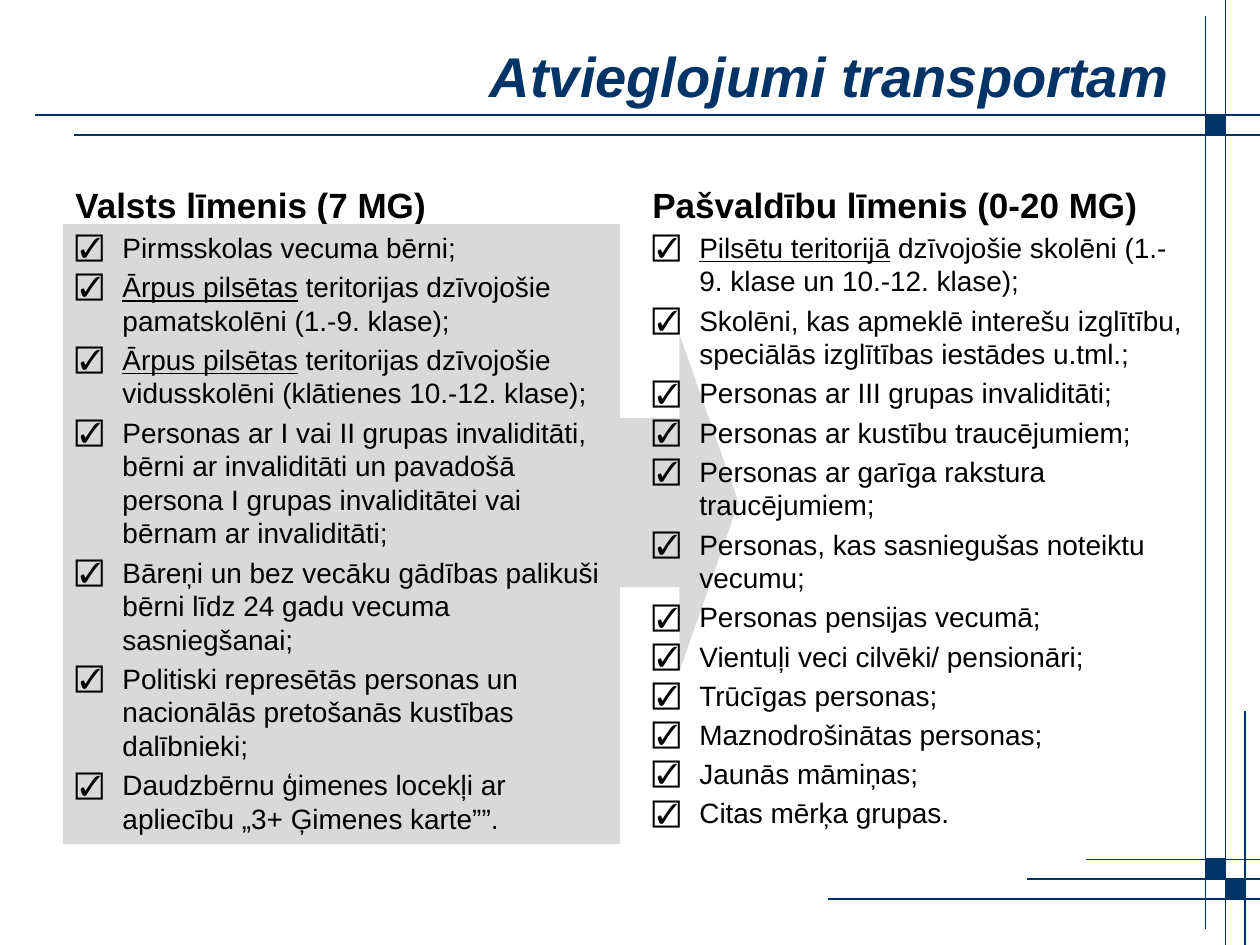
from pptx import Presentation
from pptx.dml.color import RGBColor
from pptx.enum.shapes import MSO_CONNECTOR as Link, MSO_SHAPE as Kind
from pptx.enum.text import MSO_ANCHOR as Anchor, PP_ALIGN as Align
from pptx.oxml.ns import qn
from pptx.util import Cm, Pt
from lxml.etree import SubElement

NAVY = RGBColor(0x00, 0x33, 0x66)
GREY = RGBColor(0xD9, 0xD9, 0xD9)
BLACK = RGBColor(0, 0, 0)

WIDE, HIGH = 25.4, 19.05
STEP = 0.4
COL = 24.3
TOP, LOW = 2.32, 17.32
LEFT, RIGHT = 1.27, 12.9
SPAN = 11.23

HEAD = {"size": Pt(32), "bold": True, "italic": True}
SUB = {"size": Pt(20), "bold": True}
BODY = {"size": Pt(16)}

STATE = [
    "Pirmsskolas vecuma bērni;",
    ("Ārpus pilsētas", " teritorijas dzīvojošie pamatskolēni (1.-9. klase);"),
    ("Ārpus pilsētas", " teritorijas dzīvojošie vidusskolēni (klātienes 10.-12. klase);"),
    "Personas ar I vai II grupas invaliditāti, bērni ar invaliditāti un "
    "pavadošā persona I grupas invaliditātei vai bērnam ar invaliditāti;",
    "Bāreņi un bez vecāku gādības palikuši bērni līdz 24 gadu vecuma sasniegšanai;",
    "Politiski represētās personas un nacionālās pretošanās kustības dalībnieki;",
    "Daudzbērnu ģimenes locekļi ar apliecību „3+ Ģimenes karte””.",
]
LOCAL = [
    ("Pilsētu teritorijā", " dzīvojošie skolēni (1.-9. klase un 10.-12. klase);"),
    "Skolēni, kas apmeklē interešu izglītību, speciālās izglītības iestādes u.tml.;",
    "Personas ar III grupas invaliditāti;",
    "Personas ar kustību traucējumiem;",
    "Personas ar garīga rakstura traucējumiem;",
    "Personas, kas sasniegušas noteiktu vecumu;",
    "Personas pensijas vecumā;",
    "Vientuļi veci cilvēki/ pensionāri;",
    "Trūcīgas personas;",
    "Maznodrošinātas personas;",
    "Jaunās māmiņas;",
    "Citas mērķa grupas.",
]


class Deck:
    font = "Arial"
    thin = Pt(0.75)
    hang = Cm(0.95)

    def __init__(self):
        self.show = Presentation()
        self.show.slide_width, self.show.slide_height = Cm(WIDE), Cm(HIGH)
        self.slide = self.show.slides.add_slide(self.show.slide_layouts[6])
        self.shapes = self.slide.shapes

    def line(self, *ends):
        rule = self.shapes.add_connector(Link.STRAIGHT, *map(Cm, ends))
        rule.line.color.rgb = NAVY
        rule.line.width = self.thin
        SubElement(rule._element.spPr, qn("a:effectLst"))

    def shape(self, kind, box, fill, edge=False):
        item = self.shapes.add_shape(kind, *map(Cm, box))
        item.shadow.inherit = False
        item.fill.solid()
        item.fill.fore_color.rgb = fill
        if edge:
            item.line.color.rgb = fill
            item.line.width = self.thin
        else:
            item.line.fill.background()

    def frame(self, box, anchor):
        item = self.shapes.add_textbox(*map(Cm, box))
        item.text_frame.word_wrap = True
        item.text_frame.vertical_anchor = anchor
        return item

    def style(self, font, look, color):
        font.name = self.font
        font.color.rgb = color
        for name, value in look.items():
            setattr(font, name, value)

    def label(self, text, box, look, color=BLACK, anchor=Anchor.BOTTOM, align=Align.LEFT):
        para = self.frame(box, anchor).text_frame.paragraphs[0]
        para.alignment = align
        run = para.add_run()
        run.text = text
        self.style(run.font, look, color)

    def list(self, rows, box, fill=None):
        item = self.frame(box, Anchor.TOP)
        if fill is not None:
            item.fill.solid()
            item.fill.fore_color.rgb = fill
        frame = item.text_frame
        for spot, row in enumerate(rows):
            para = frame.add_paragraph() if spot else frame.paragraphs[0]
            para.space_before = Pt(3.2 if spot else 0)
            self.bullet(para)
            mark, rest = ("", row) if isinstance(row, str) else row
            for text, under in ((mark, True), (rest, False)):
                if text:
                    run = para.add_run()
                    run.text = text
                    self.style(run.font, {**BODY, "underline": under}, BLACK)

    def bullet(self, para):
        props = para._p.get_or_add_pPr()
        props.set("marL", str(self.hang))
        props.set("indent", str(-self.hang))
        SubElement(props, qn("a:buFont"), typeface=self.font)
        SubElement(props, qn("a:buChar"), char="☑")


def main():
    deck = Deck()
    for start, y in ((0.7, TOP), (1.5, TOP + STEP), (21.9, LOW),
                     (20.7, LOW + STEP), (16.69, LOW + 2 * STEP)):
        deck.line(start, y, WIDE, y)
    for spot, (start, end) in enumerate(((0.33, 18.72), (0, HIGH), (14.33, HIGH))):
        x = COL + spot * STEP
        deck.line(x, start, x, end)
    for x, y in ((COL, TOP), (COL, LOW), (COL + STEP, LOW + STEP)):
        deck.shape(Kind.RECTANGLE, (x, y, STEP, STEP), NAVY, edge=True)

    deck.shape(Kind.RIGHT_ARROW, (LEFT + SPAN, 6.73, 2.39, 6.81), GREY)
    deck.label("Atvieglojumi transportam ", (LEFT, 0.76, 22.86, 1.52), HEAD,
               NAVY, Anchor.MIDDLE, Align.RIGHT)
    for x, head, rows, fill in ((LEFT, "Valsts līmenis (7 MG)", STATE, GREY),
                                (RIGHT, "Pašvaldību līmenis (0-20 MG)", LOCAL, None)):
        deck.label(head, (x, 2.92, SPAN, 1.75), SUB)
        deck.list(rows, (x, 4.52, SPAN, 12.5), fill)
    deck.show.save("out.pptx")


if __name__ == "__main__":
    main()
